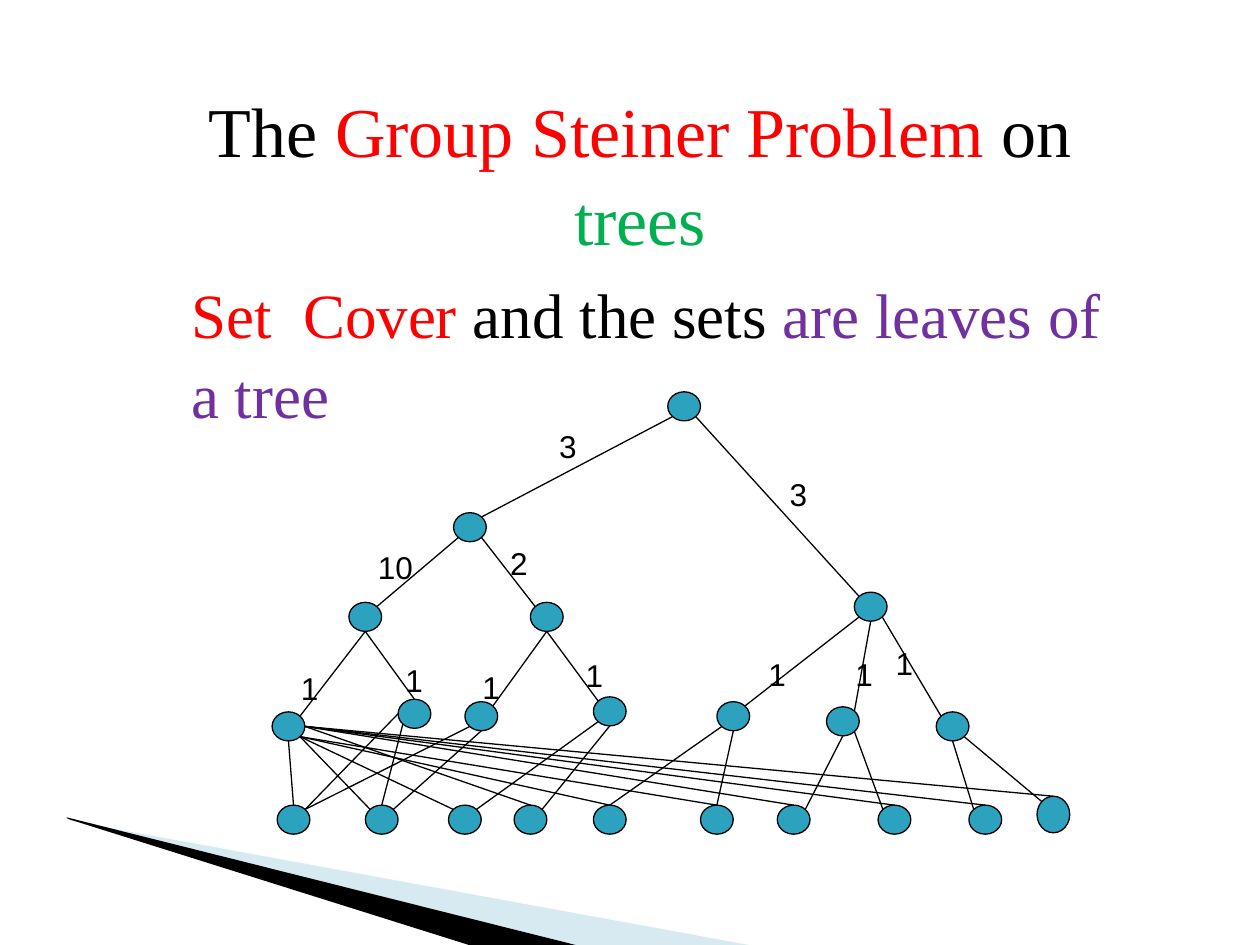
from dataclasses import dataclass
from math import sqrt

from lxml.etree import SubElement
from pptx import Presentation
from pptx.dml.color import RGBColor as RGB
from pptx.enum.shapes import MSO_CONNECTOR as CXN, MSO_SHAPE as SHAPE
from pptx.enum.text import PP_ALIGN as ALIGN
from pptx.oxml.ns import qn
from pptx.util import Pt


@dataclass(frozen=True)
class Theme:
    black: str = "000000"
    red: str = "FF0000"
    green: str = "00B050"
    purple: str = "7030A0"
    node: str = "2DA2BF"
    wedge: str = "9FCBDC"
    serif: str = "Times New Roman"
    sans: str = "Arial"
    title: int = 40
    body: int = 36
    label: int = 18
    line: float = 0.75


NODE_W, NODE_H = 18.7, 16.6
DIAG = sqrt(0.5)
SITES = {"n": (0, -1), "s": (0, 1), "e": (1, 0), "w": (-1, 0),
         "ne": (DIAG, -DIAG), "nw": (-DIAG, -DIAG),
         "se": (DIAG, DIAG), "sw": (-DIAG, DIAG)}


class TreeSlide:
    def __init__(self, prs, theme):
        self.theme = theme
        self.s = prs.slides.add_slide(prs.slide_layouts[6])
        self.nodes = {}

    def wedge(self, points, color, alpha=None):
        builder = self.s.shapes.build_freeform(*points[0], scale=Pt(1))
        builder.add_line_segments(points[1:], close=True)
        sp = builder.convert_to_shape()
        sp.shadow.inherit = False
        sp.line.fill.background()
        sp.fill.solid()
        sp.fill.fore_color.rgb = RGB.from_string(color)
        if alpha is not None:
            clr = sp.fill._xPr.find(".//" + qn("a:srgbClr"))
            SubElement(clr, qn("a:alpha"), val=str(alpha * 1000))

    def node(self, name, x, y, h=NODE_H):
        sp = self.s.shapes.add_shape(SHAPE.OVAL, Pt(x), Pt(y), Pt(NODE_W), Pt(h))
        sp.shadow.inherit = False
        sp.fill.solid()
        sp.fill.fore_color.rgb = RGB.from_string(self.theme.node)
        self.stroke(sp.line)
        self.nodes[name] = sp

    def stroke(self, line):
        line.color.rgb = RGB.from_string(self.theme.black)
        line.width = Pt(self.theme.line)

    def site(self, name, side):
        """Return the point on a node's rim in a compass direction."""
        sp = self.nodes[name]
        dx, dy = SITES[side]
        return (round(sp.left + sp.width / 2 * (1 + dx)),
                round(sp.top + sp.height / 2 * (1 + dy)))

    def edge(self, start, start_side, end, end_side):
        c = self.s.shapes.add_connector(
            CXN.STRAIGHT, *self.site(start, start_side), *self.site(end, end_side))
        self.stroke(c.line)
        SubElement(c._element.spPr, qn("a:effectLst"))

    def text(self, box, runs, font, size, align=ALIGN.LEFT, spacing=1.0):
        tf = self.s.shapes.add_textbox(*map(Pt, box)).text_frame
        tf.word_wrap = True
        p = tf.paragraphs[0]
        p.alignment = align
        p.line_spacing = spacing
        p.font.name = font
        p.font.size = Pt(size)
        for text, color in runs:
            r = p.add_run()
            r.text = text
            r.font.color.rgb = RGB.from_string(color)

    def label(self, text, x, y, w):
        t = self.theme
        self.text((x, y, w, 29), [(text, t.black)], t.sans, t.label)


INNER_NODES = {"root": (381.6, 223.9), "L": (259.2, 293), "R": (488.2, 338.4),
               "LL": (199.4, 344.2), "LR": (303.1, 344.2)}
SET_NODES = [(155.5, 406.8), (227.5, 399.6), (265.7, 401), (339.1, 398.2),
             (409.7, 401), (472.3, 403.9), (535, 406.8)]
ELEMENT_X = [158.4, 208.8, 256.3, 293.8, 339.1, 400.3, 444.2, 501.8, 553.7]
ELEMENT_Y = 460.1

EDGES = """
root sw L ne, root se R nw, L sw LL ne, L se LR nw,
LL s S1 ne, LL s S2 n, LR s S3 ne, LR s S4 nw,
R sw S5 ne, R s S6 ne, R se S7 nw,
S1 s E1 n, S1 se E2 nw, S1 se E3 nw, S1 e E4 n, S1 se E5 n,
S1 se E6 n, S1 e E7 n, S1 e E8 n, S1 e E9 n, S1 e E10 n,
S2 w E1 ne, S2 sw E2 n, S3 sw E1 ne, S3 s E2 ne,
S4 sw E3 ne, S4 s E4 ne, S5 sw E5 n, S5 s E6 n,
S6 s E7 ne, S6 se E8 nw, S7 s E9 nw, S7 se E10 nw
"""

COSTS = [("3", 312.5, 240.5, 30), ("3", 444.2, 267.8, 44),
         ("10", 208.8, 309.6, 57), ("2", 284.4, 307.4, 37),
         ("1", 164.9, 378.7, 22), ("1", 224.6, 374.4, 32),
         ("1", 268.6, 378, 37), ("1", 327.6, 371.5, 42),
         ("1", 432, 370.8, 28), ("1", 481.7, 370.8, 25),
         ("1", 504.7, 364.3, 40)]


def main():
    prs = Presentation()
    prs.slide_width, prs.slide_height = Pt(720), Pt(540)
    t = Theme()
    s = TreeSlide(prs, t)

    s.wedge([(39.6, 468.7), (428.4, 540), (328.3, 540), (39.6, 468)], t.wedge, 40)
    s.wedge([(38.2, 467.3), (329, 540), (267.8, 540), (38.9, 468)], t.black)

    for name, (x, y) in INNER_NODES.items():
        s.node(name, x, y)
    for i, (x, y) in enumerate(SET_NODES, 1):
        s.node(f"S{i}", x, y)
    for i, x in enumerate(ELEMENT_X, 1):
        s.node(f"E{i}", x, ELEMENT_Y)
    s.node("E10", 592.6, 455, 20.9)

    for edge in EDGES.split(","):
        s.edge(*edge.split())
    for cost in COSTS:
        s.label(*cost)

    s.text((77.8, 44, 576, 103.7),
           [("The ", t.black), ("Group Steiner Problem ", t.red),
            ("on ", t.black), ("trees", t.green)],
           t.serif, t.title, ALIGN.CENTER, 1.05)
    s.text((102.2, 152, 552.2, 93.6),
           [("Set  Cover ", t.red), ("and the sets ", t.black),
            ("are leaves of a tree", t.purple)],
           t.serif, t.body, spacing=1.05)

    prs.save("out.pptx")


if __name__ == "__main__":
    main()
